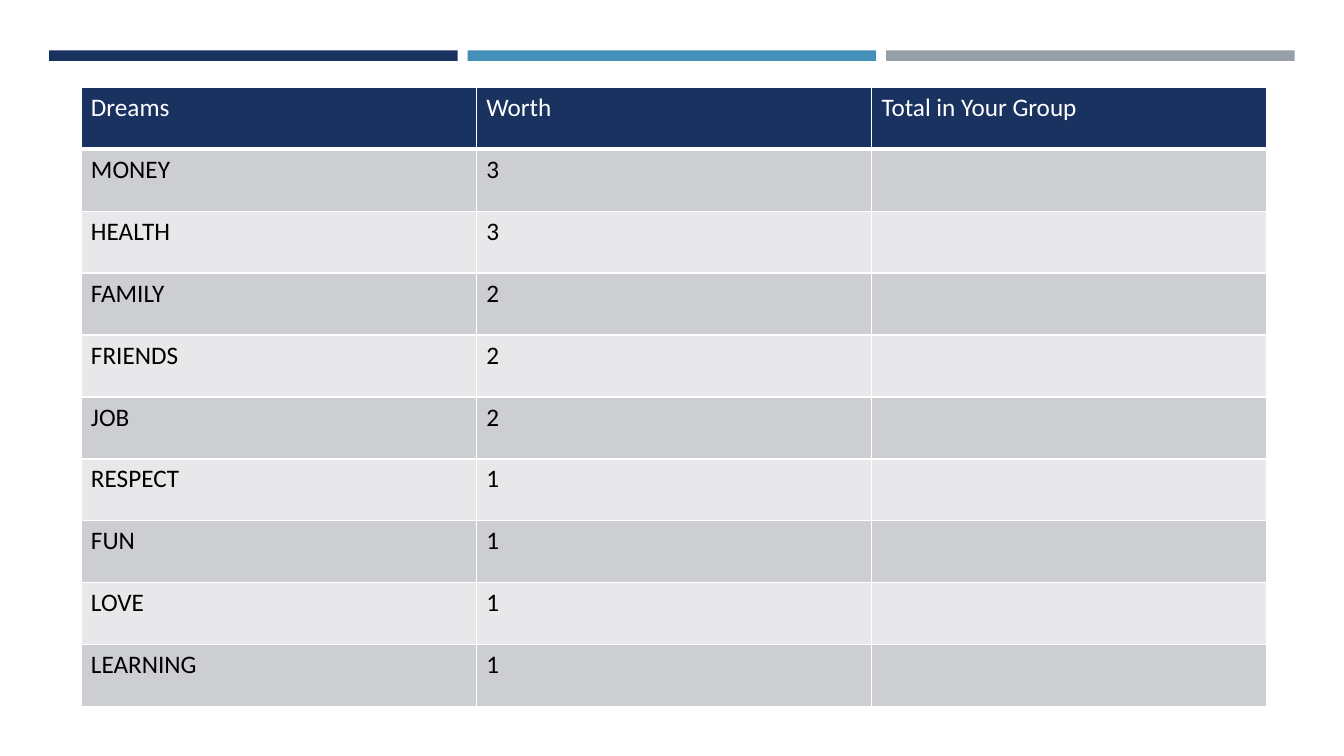
from lxml import etree
from pptx import Presentation
from pptx import util as u
from pptx.dml.color import RGBColor
from pptx.enum import shapes
from pptx.oxml import ns

NAVY = RGBColor(0x1A, 0x32, 0x60)
BLUE = RGBColor(0x45, 0x90, 0xB8)
GRAY = RGBColor(0x96, 0x9F, 0xA7)
DARK_BAND = RGBColor(0xCD, 0xCE, 0xD2)
LIGHT_BAND = RGBColor(0xE8, 0xE8, 0xEA)
WHITE = RGBColor(0xFF, 0xFF, 0xFF)
BLACK = RGBColor(0x00, 0x00, 0x00)

DREAMS = [
    ("Dreams", "Worth", "Total in Your Group"),
    ("MONEY", "3", ""),
    ("HEALTH", "3", ""),
    ("FAMILY", "2", ""),
    ("FRIENDS", "2", ""),
    ("JOB", "2", ""),
    ("RESPECT", "1", ""),
    ("FUN", "1", ""),
    ("LOVE", "1", ""),
    ("LEARNING", "1", ""),
]


def write(frame, content, size=18, color=BLACK, font="Calibri"):
    """Put one formatted paragraph into a text frame."""
    para = frame.paragraphs[0]
    para.text = content
    para.font.size = u.Pt(size)
    para.font.name = font
    para.font.color.rgb = color


def add_borders(cell, color=WHITE, **widths):
    """Draw cell borders, given their widths in points by side."""
    properties = cell._tc.get_or_add_tcPr()
    for position, (side, width) in enumerate(widths.items()):
        line = etree.Element(ns.qn(f"a:ln{side}"), w=str(u.Pt(width)))
        fill = etree.SubElement(line, ns.qn("a:solidFill"))
        etree.SubElement(fill, ns.qn("a:srgbClr"), val=str(color))
        properties.insert(position, line)


def add_top_bars(page, left, top, width, height, gap=7.2):
    """Place three equal colour bars across the given box."""
    colors = (NAVY, BLUE, GRAY)
    bar_width = (width - gap * (len(colors) - 1)) / len(colors)
    for index, color in enumerate(colors):
        bar = page.shapes.add_shape(
            shapes.MSO_SHAPE.RECTANGLE,
            u.Pt(left + index * (bar_width + gap)), u.Pt(top),
            u.Pt(bar_width), u.Pt(height))
        bar.shadow.inherit = False
        bar.fill.solid()
        bar.fill.fore_color.rgb = color
        bar.line.fill.background()


def add_dreams_table(page, left, top, width, height):
    """Fill the given box with the table of dreams and their worth."""
    table = page.shapes.add_table(
        len(DREAMS), len(DREAMS[0]),
        u.Pt(left), u.Pt(top), u.Pt(width), u.Pt(height)).table
    for row_index, values in enumerate(DREAMS):
        is_header = row_index == 0
        band = DARK_BAND if row_index % 2 else LIGHT_BAND
        for column_index, value in enumerate(values):
            cell = table.cell(row_index, column_index)
            cell.fill.solid()
            cell.fill.fore_color.rgb = NAVY if is_header else band
            write(cell.text_frame, value, color=WHITE if is_header else BLACK)
            add_borders(cell, L=1, R=1, T=1, B=3 if is_header else 1)


def main():
    """Build and save the slide."""
    deck = Presentation()
    deck.slide_width, deck.slide_height = u.Pt(960), u.Pt(540)
    page = deck.slides.add_slide(deck.slide_layouts[6])
    add_top_bars(page, 35.2, 36, 889.6, 7.5)
    add_dreams_table(page, 57.8, 62.3, 847, 442.5)
    deck.save("out.pptx")


if __name__ == "__main__":
    main()
